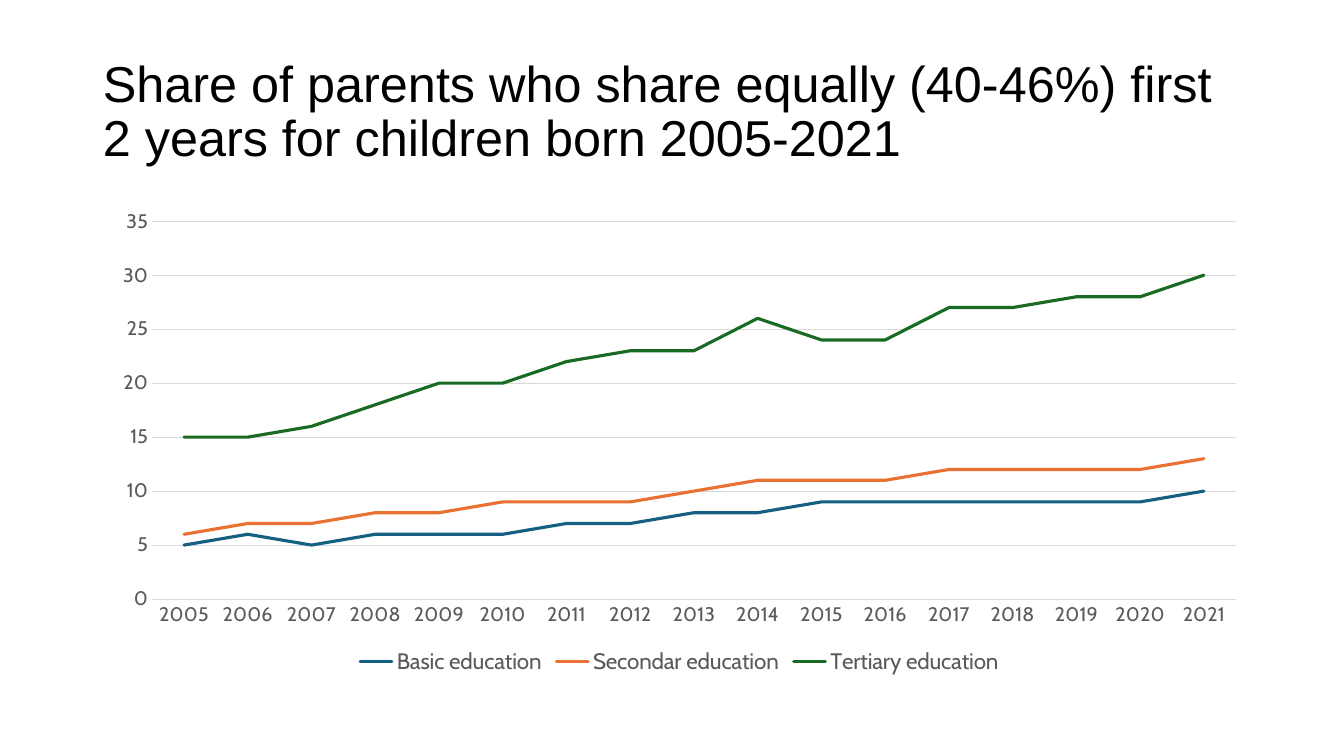
from pptx import Presentation
from pptx import util as u
from pptx.chart.data import CategoryChartData
from pptx.dml.color import RGBColor
from pptx.enum import chart as ch, text
from pptx.oxml import ns

HUES = {
    "title": "000000",
    "label": "595959",
    "grid": "D9D9D9",
    "basic": "156082",
    "second": "E97132",
    "third": "196B24",
}

# Shares in whole percent, as on the value axis
YEARS = [str(year) for year in range(2005, 2022)]
SHARES = [
    ("Basic education", "basic",
     [5, 6, 5, 6, 6, 6, 7, 7, 8, 8, 9, 9, 9, 9, 9, 9, 10]),
    ("Secondar education", "second",
     [6, 7, 7, 8, 8, 9, 9, 9, 10, 11, 11, 11, 12, 12, 12, 12, 13]),
    ("Tertiary education", "third",
     [15, 15, 16, 18, 20, 20, 22, 23, 23, 26, 24, 24, 27, 27, 28, 28, 30]),
]


def style(font, size, hue, face):
    font.size = u.Pt(size)
    font.name = face
    font.bold = False
    font.color.rgb = RGBColor.from_string(HUES[hue])


def write(frame, words, size=18, hue="title", face="Arial", space=1.0,
          align=text.PP_ALIGN.LEFT, anchor=text.MSO_ANCHOR.MIDDLE):
    frame.word_wrap = True
    frame.auto_size = text.MSO_AUTO_SIZE.NONE
    frame.vertical_anchor = anchor
    para = frame.paragraphs[0]
    para.alignment = align
    para.line_spacing = space
    run = para.add_run()
    run.text = words
    style(run.font, size, hue, face)


def stroke(line, hue, width):
    line.color.rgb = RGBColor.from_string(HUES[hue])
    line.width = u.Pt(width)


class Page:
    face = "Cabin"

    def __init__(self, deck):
        self.slide = deck.slides.add_slide(deck.slide_layouts[5])

    def title(self, words, box):
        shape = self.slide.shapes.title
        shape.left, shape.top, shape.width, shape.height = map(u.Inches, box)
        write(shape.text_frame, words, size=36, space=0.9)

    def lines(self, cats, rows, box):
        data = CategoryChartData()
        data.categories = cats
        for name, _, vals in rows:
            data.add_series(name, vals)
        chart = self.slide.shapes.add_chart(
            ch.XL_CHART_TYPE.LINE, *map(u.Inches, box), data).chart
        chart.has_title = False
        style(chart.font, 10, "title", self.face)

        # Series with round line ends
        for row, (_, hue, _) in zip(chart.plots[0].series, rows):
            row.smooth = False
            row.marker.style = ch.XL_MARKER_STYLE.NONE
            stroke(row.format.line, hue, 2.25)
            row._element.get_or_add_spPr().find(ns.qn("a:ln")).set("cap", "rnd")

        # Axes
        for axis in (chart.category_axis, chart.value_axis):
            axis.major_tick_mark = axis.minor_tick_mark = ch.XL_TICK_MARK.NONE
            style(axis.tick_labels.font, 14, "label", self.face)
        stroke(chart.category_axis.format.line, "grid", 0.75)
        scale = chart.value_axis
        scale.minimum_scale, scale.maximum_scale, scale.major_unit = 0, 35, 5
        scale.format.line.fill.background()
        scale.has_major_gridlines = True
        stroke(scale.major_gridlines.format.line, "grid", 0.75)

        # Legend
        chart.has_legend = True
        chart.legend.position = ch.XL_LEGEND_POSITION.BOTTOM
        chart.legend.include_in_layout = False
        style(chart.legend.font, 16, "label", self.face)


def main():
    deck = Presentation()
    deck.slide_width, deck.slide_height = u.Inches(40 / 3), u.Inches(7.5)
    page = Page(deck)
    page.title("Share of parents who share equally (40-46%) first 2 years "
               "for children born 2005-2021", (0.92, 0.4, 11.5, 1.45))
    page.lines(YEARS, SHARES, (0.99, 1.98, 11.5, 4.76))
    deck.save("out.pptx")


if __name__ == "__main__":
    main()
